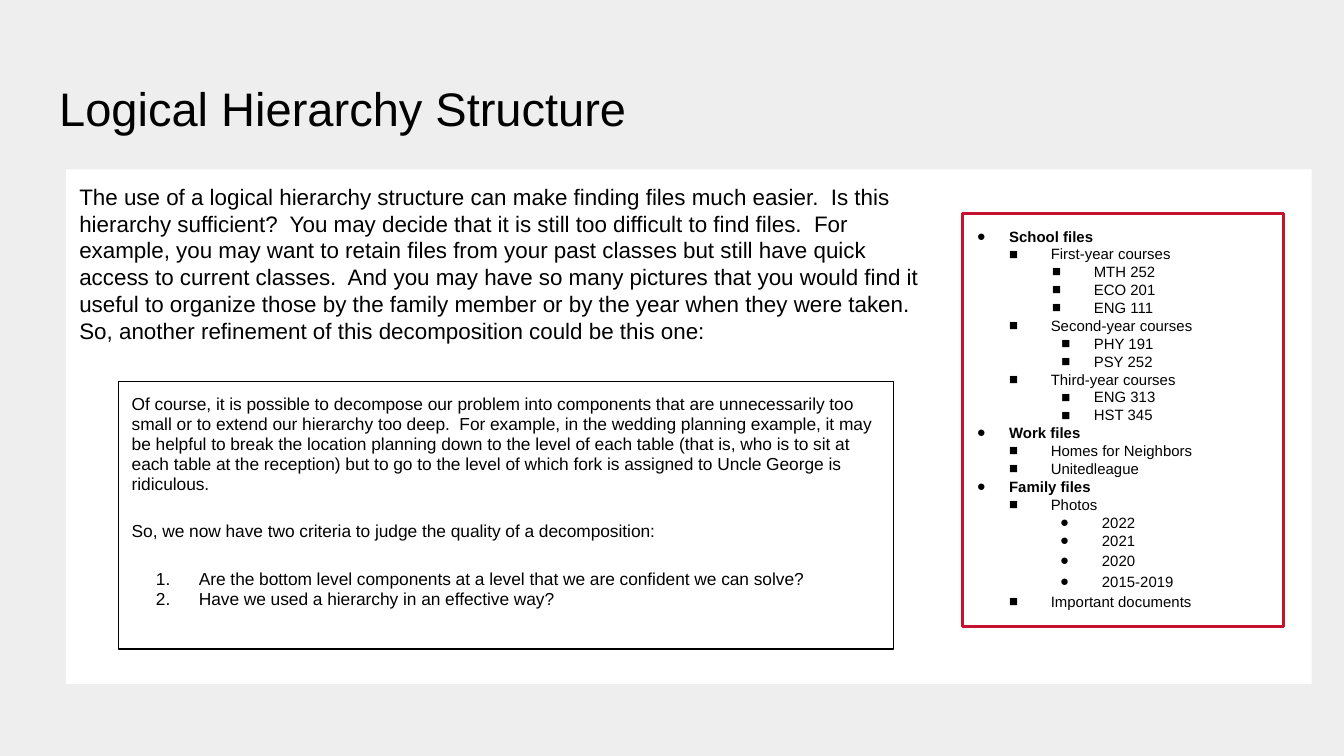
import pptx
import pptx.dml.color
import pptx.enum.shapes
import pptx.enum.text
import pptx.oxml
import pptx.oxml.ns
import pptx.util
from pptx.util import Inches, Pt

BLACK, WHITE, RED, GRAY = "000000", "FFFFFF", "C41230", "EEEEEE"

INTRO = (
    "The use of a logical hierarchy structure can make finding files much easier.  "
    "Is this hierarchy sufficient?  You may decide that it is still too difficult to find files.  "
    "For example, you may want to retain files from your past classes but still have quick access "
    "to current classes.  And you may have so many pictures that you would find it useful to "
    "organize those by the family member or by the year when they were taken.  "
    "So, another refinement of this decomposition could be this one:"
)
CAUTION = (
    "Of course, it is possible to decompose our problem into components that are unnecessarily "
    "too small or to extend our hierarchy too deep.  For example, in the wedding planning example, "
    "it may be helpful to break the location planning down to the level of each table (that is, "
    "who is to sit at each table at the reception) but to go to the level of which fork is "
    "assigned to Uncle George is ridiculous."
)
CRITERIA_LEAD = "So, we now have two criteria to judge the quality of a decomposition:"
CRITERIA = [
    "Are the bottom level components at a level that we are confident we can solve?",
    "Have we used a hierarchy in an effective way?",
]

# Kind of entry: level, left margin, hanging indent, bullet
ENTRY_KINDS = {
    "area": (0, 0.25, 0.24, "●"),
    "group": (1, 0.56, 0.31, "■"),
    "first-year course": (1, 0.88, 0.31, "■"),
    "course": (1, 0.88, 0.24, "■"),
    "year": (2, 0.94, 0.31, "●"),
}
# Kind, entries, line spacing
FILE_TREE = [
    ("area", ["School files"], 1),
    ("group", ["First-year courses"], 1),
    ("first-year course", ["MTH 252", "ECO 201", "ENG 111"], 1),
    ("group", ["Second-year courses"], 1),
    ("course", ["PHY 191", "PSY 252"], 1),
    ("group", ["Third-year courses"], 1),
    ("course", ["ENG 313", "HST 345"], 1),
    ("area", ["Work files"], 1),
    ("group", ["Homes for Neighbors", "Unitedleague"], 1),
    ("area", ["Family files"], 1),
    ("group", ["Photos"], 1),
    ("year", ["2022", "2021"], 1),
    ("year", ["2020", "2015-2019"], 1.15),
    ("group", ["Important documents"], 1.15),
]


def rgb(value):
    return pptx.dml.color.RGBColor.from_string(value)


class SlideWriter:
    font_name = "Arial"
    inset = Inches(0.1)

    def __init__(self, slide):
        self.slide = slide
        fill = slide.background.fill
        fill.solid()
        fill.fore_color.rgb = rgb(GRAY)

    def prepare(self, shape, box, fill=None, line=None, line_width=0.75):
        """Place and style a shape, and return its text frame."""
        shape.left, shape.top, shape.width, shape.height = map(Inches, box)
        if fill:
            shape.fill.solid()
            shape.fill.fore_color.rgb = rgb(fill)
        if line:
            shape.line.color.rgb = rgb(line)
            shape.line.width = Pt(line_width)
        frame = shape.text_frame
        frame.word_wrap = True
        frame.auto_size = pptx.enum.text.MSO_AUTO_SIZE.NONE
        frame.vertical_anchor = pptx.enum.text.MSO_ANCHOR.TOP
        frame.margin_left = frame.margin_right = self.inset
        frame.margin_top = frame.margin_bottom = self.inset
        return frame

    def placeholder(self, index, box, **style):
        return self.prepare(self.slide.placeholders[index], box, **style)

    def panel(self, box, **style):
        shape = self.slide.shapes.add_shape(pptx.enum.shapes.MSO_SHAPE.RECTANGLE, *map(Inches, box))
        shape.shadow.inherit = False
        return self.prepare(shape, box, **style)

    def paragraph(self, frame, text, size, before=0, after=0, spacing=1, level=0,
                  margin=0, hanging=0, bullet="<a:buNone %s/>", bold=False):
        first = frame.paragraphs[0]
        para = first if not first.runs else frame.add_paragraph()
        para.add_run().text = text
        para.alignment = pptx.enum.text.PP_ALIGN.LEFT
        para.level = level
        para.line_spacing = spacing
        para.space_before, para.space_after = Pt(before), Pt(after)
        props = para._p.get_or_add_pPr()
        props.set("marL", str(Inches(margin)))
        props.set("indent", str(-Inches(hanging)))
        color = f'<a:buClr %s><a:srgbClr val="{BLACK}"/></a:buClr>'
        bullet_size = f'<a:buSzPts %s val="{round(size * 100)}"/>'
        bullet_font = f'<a:buFont %s typeface="{self.font_name}"/>'
        for xml in (color, bullet_size, bullet_font, bullet):
            props.append(pptx.oxml.parse_xml(xml % pptx.oxml.ns.nsdecls("a")))
        font = para.font
        font.name, font.size, font.bold = self.font_name, Pt(size), bold
        font.color.rgb = rgb(BLACK)


def main():
    deck = pptx.Presentation()
    deck.slide_width = Inches(10)
    deck.slide_height = deck.slide_width * 9 // 16
    writer = SlideWriter(deck.slides.add_slide(deck.slide_layouts[3]))

    title = writer.placeholder(0, (0.34, 0.49, 9.32, 0.63))
    title.vertical_anchor = pptx.enum.text.MSO_ANCHOR.MIDDLE
    writer.paragraph(title, "Logical Hierarchy Structure", 25.2)

    intro = writer.placeholder(1, (0.49, 1.26, 9.27, 3.83), fill=WHITE)
    intro.margin_right = Inches(2.86)  # keeps the text clear of the file tree
    writer.paragraph(intro, INTRO, 12, before=15, after=15)

    advice = writer.placeholder(2, (0.88, 2.84, 5.77, 1.99), fill=WHITE, line=BLACK)
    for text in (CAUTION, CRITERIA_LEAD):
        writer.paragraph(advice, text, 9.3, before=15, spacing=0.95)
    for number, text in enumerate(CRITERIA):
        writer.paragraph(advice, text, 9.3, before=0 if number else 15, spacing=0.95,
                         margin=0.5, hanging=0.32,
                         bullet='<a:buAutoNum %s type="arabicPeriod"/>')

    tree = writer.panel((7.16, 1.59, 2.39, 3.07), fill=WHITE, line=RED, line_width=1.5)
    tree.auto_size = pptx.enum.text.MSO_AUTO_SIZE.SHAPE_TO_FIT_TEXT
    for kind, entries, spacing in FILE_TREE:
        level, margin, hanging, bullet = ENTRY_KINDS[kind]
        for position, entry in enumerate(entries):
            opens_tree = entry == FILE_TREE[0][1][0]
            writer.paragraph(tree, entry, 8, before=15 if opens_tree else 0, spacing=spacing,
                             level=level, margin=margin, hanging=hanging,
                             bullet=f'<a:buChar %s char="{bullet}"/>', bold=kind == "area")

    deck.save("out.pptx")


if __name__ == "__main__":
    main()
